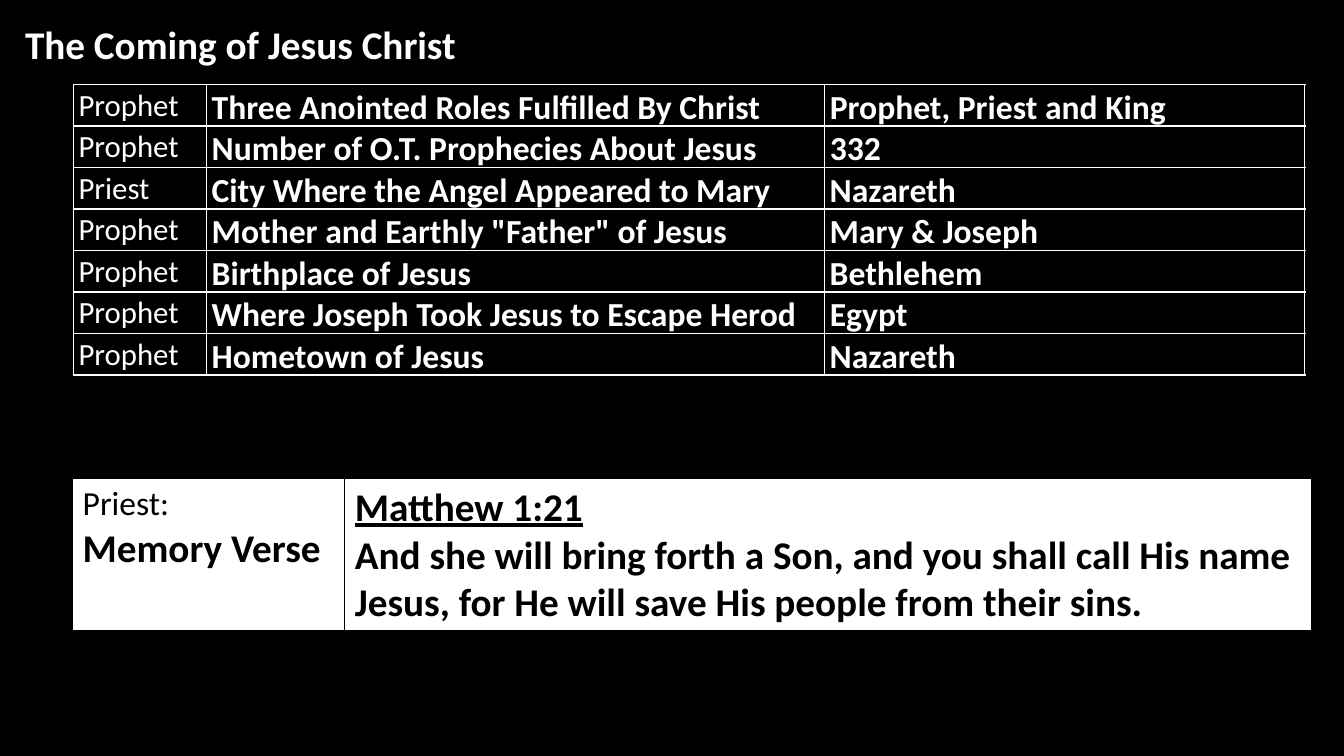
from lxml.etree import SubElement
from pptx import Presentation
from pptx.dml.color import RGBColor
from pptx.enum.shapes import MSO_CONNECTOR
from pptx.enum.text import MSO_AUTO_SIZE
from pptx.oxml import parse_xml
from pptx.oxml.ns import nsdecls, qn
from pptx.util import Inches, Pt

FONT = "Calibri"
WHITE, BLACK = "FFFFFF", "000000"
TITLE_BOX = (0.15, 0.15, 11.66, 0.57)
FACTS_BOX = (0.72, 0.84, 12.23, 2.88)
VERSE_BOX = (0.72, 4.75, 12.29, 1.5)
COLUMN_EDGES = (0.01, 1.33, 7.46, 12.22)
VERSE_COLUMNS = (2.7, 9.59)

# Each entry is a text and the width of its box.
PROPHET, PRIEST = ("Prophet", 1.16), ("Priest", 0.86)
FACTS = [
    (PROPHET, ("Three Anointed Roles Fulfilled By Christ", 5.65), ("Prophet, Priest and King", 3.52)),
    (PROPHET, ("Number of O.T. Prophecies About Jesus", 5.64), ("332", 0.68)),
    (PRIEST, ("City Where the Angel Appeared to Mary", 5.73), ("Nazareth", 1.44)),
    (PROPHET, ('Mother and Earthly "Father" of Jesus', 5.31), ("Mary & Joseph", 2.24)),
    (PROPHET, ("Birthplace of Jesus", 2.75), ("Bethlehem", 1.77)),
    (PROPHET, ("Where Joseph Took Jesus to Escape Herod", 6.02), ("Egypt", 0.95)),
    (PROPHET, ("Hometown of Jesus", 2.89), ("Nazareth", 1.44)),
]


def rgb(value):
    return RGBColor.from_string(value)


def style(para, text, size, color, bold=True, underline=None):
    para.text = text
    font = para.font
    font.name, font.size, font.bold, font.underline = FONT, Pt(size), bold, underline
    font.color.rgb = rgb(color)


def add_text(slide, box, text, size, bold=True, wrap=True):
    frame = slide.shapes.add_textbox(*map(Inches, box)).text_frame
    frame.word_wrap = wrap
    frame.auto_size = MSO_AUTO_SIZE.SHAPE_TO_FIT_TEXT
    style(frame.paragraphs[0], text, size, WHITE, bold)
    return frame


def add_rule(slide, *ends):
    rule = slide.shapes.add_connector(MSO_CONNECTOR.STRAIGHT, *map(Inches, ends))
    rule.line.color.rgb = rgb(WHITE)
    rule.line.width = Pt(1)
    SubElement(rule._element.spPr, qn("a:effectLst"))


def add_facts(slide, box):
    """Draw the ruled grid of roles, questions and answers."""
    left, top, width, height = box
    row_height = height / len(FACTS)
    for edge in COLUMN_EDGES:
        add_rule(slide, left + edge, top, left + edge, top + height)
    for index in range(len(FACTS) + 1):
        y = top + index * row_height
        add_rule(slide, left, y, left + width, y)
    for index, row in enumerate(FACTS):
        y = top + index * row_height + 0.01
        for column, (text, text_width) in enumerate(row):
            is_role = column == 0
            place = (left + COLUMN_EDGES[column] + 0.05, y, text_width, 0.45 if is_role else 0.5)
            frame = add_text(slide, place, text, 22 if is_role else 24, not is_role, wrap=False)
            frame.margin_left = frame.margin_right = frame.margin_top = frame.margin_bottom = 0


def fill_verse_cell(cell):
    """Give the cell a white fill and thin black borders."""
    properties = cell._tc.get_or_add_tcPr()
    for side in ("lnL", "lnR", "lnT", "lnB"):
        properties.append(parse_xml(
            f'<a:{side} {nsdecls("a")} w="12700"><a:solidFill>'
            f'<a:srgbClr val="{BLACK}"/></a:solidFill></a:{side}>'))
    cell.fill.solid()
    cell.fill.fore_color.rgb = rgb(WHITE)


def add_verse(slide, box):
    table = slide.shapes.add_table(1, 2, *map(Inches, box)).table
    table.first_row = table.horz_banding = False
    for column, width in zip(table.columns, VERSE_COLUMNS):
        column.width = Inches(width)
    label, verse = table.cell(0, 0), table.cell(0, 1)
    for cell in (label, verse):
        fill_verse_cell(cell)
        cell.text_frame.add_paragraph()
    role, heading = label.text_frame.paragraphs
    style(role, "Priest:", 24, BLACK, bold=False)
    style(heading, "Memory Verse", 28, BLACK)
    reference, words = verse.text_frame.paragraphs
    style(reference, "Matthew 1:21", 28, BLACK, underline=True)
    style(words, "And she will bring forth a Son, and you shall call His name "
                 "Jesus, for He will save His people from their sins.", 28, BLACK)


def main():
    deck = Presentation()
    deck.slide_width, deck.slide_height = Inches(13.33), Inches(7.5)
    slide = deck.slides.add_slide(deck.slide_layouts[6])
    slide.background.fill.solid()
    slide.background.fill.fore_color.rgb = rgb(BLACK)
    add_text(slide, TITLE_BOX, "The Coming of Jesus Christ", 28)
    add_verse(slide, VERSE_BOX)
    add_facts(slide, FACTS_BOX)
    deck.save("out.pptx")


if __name__ == "__main__":
    main()
